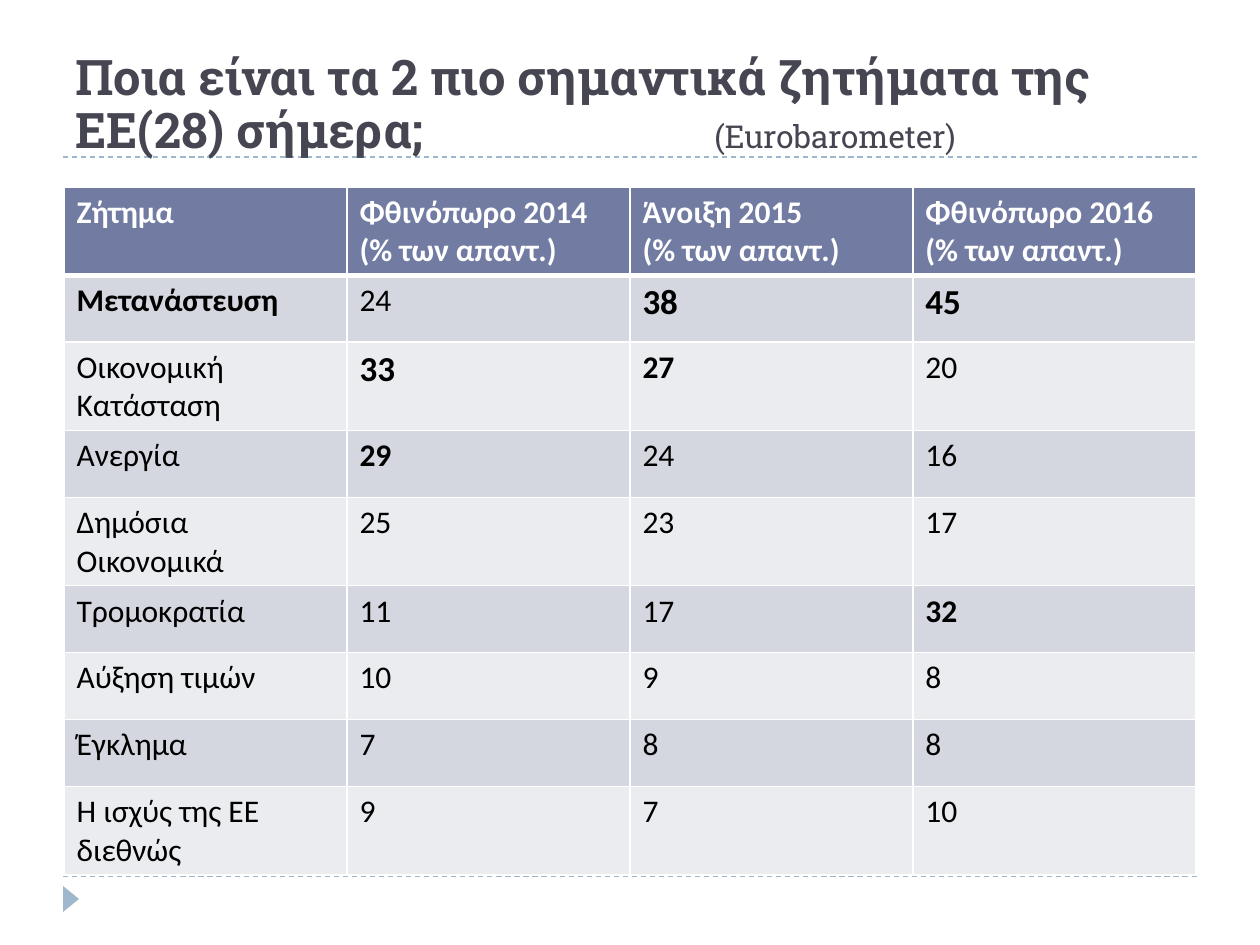
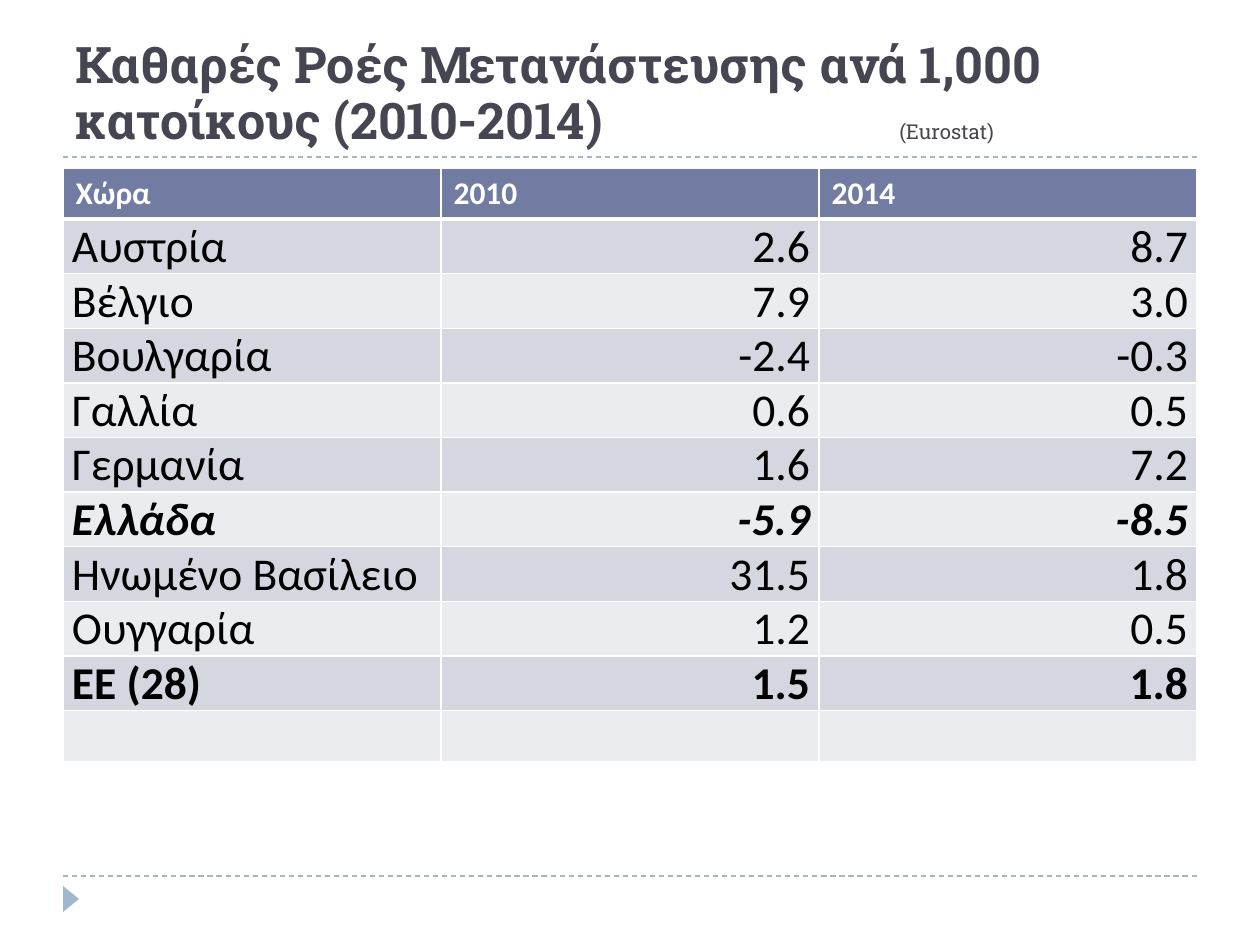
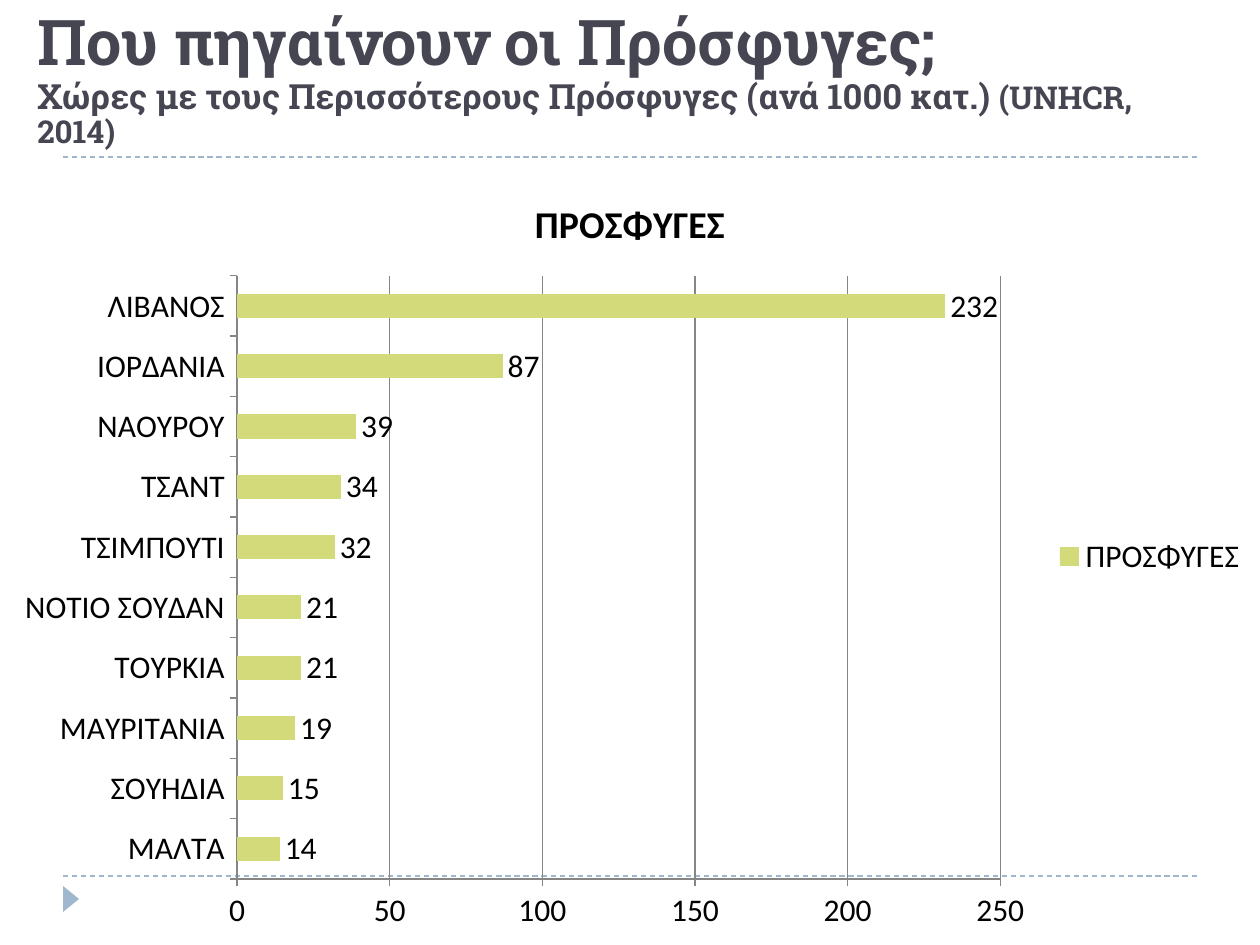
from lxml.etree import SubElement
from pptx import Presentation
from pptx.chart.data import CategoryChartData
from pptx.dml.color import RGBColor
from pptx.enum.chart import XL_CHART_TYPE, XL_LABEL_POSITION, XL_LEGEND_POSITION, XL_TICK_MARK
from pptx.enum.dml import MSO_LINE
from pptx.enum.shapes import MSO_CONNECTOR, MSO_SHAPE
from pptx.enum.text import MSO_ANCHOR, PP_ALIGN
from pptx.oxml.ns import qn
from pptx.util import Emu, Pt

PX_PER_INCH = 126
WIDTH, HEIGHT = 1260, 945
LEFT, RIGHT = 63, 1197
TITLE_RULE, FOOTER_RULE = 157, 876


def px(value):
    return Emu(round(value * 914400 / PX_PER_INCH))


def color(hex_string):
    return RGBColor.from_string(hex_string)


class Deck:
    heading_font = "Roboto Slab"
    body_font = "Calibri"
    ink = "464653"
    black = "000000"
    white = "FFFFFF"
    accent = "9FB8CD"
    header_fill = "727CA3"
    bands = ("D5D7E0", "EBECF0")
    bar_fill = "D2DA7A"
    grid = "868686"

    def __init__(self):
        self.presentation = Presentation()
        self.presentation.slide_width = px(WIDTH)
        self.presentation.slide_height = px(HEIGHT)
        self.slide = None

    def add_slide(self):
        self.slide = self.presentation.slides.add_slide(self.presentation.slide_layouts[6])
        for y in (FOOTER_RULE, TITLE_RULE):
            self.rule(y)
        self.marker()

    def rule(self, y):
        connector = self.slide.shapes.add_connector(
            MSO_CONNECTOR.STRAIGHT, px(LEFT), px(y), px(RIGHT), px(y))
        connector.line.color.rgb = color(self.accent)
        connector.line.width = Pt(0.75)
        connector.line.dash_style = MSO_LINE.DASH
        SubElement(connector._element.spPr, qn("a:effectLst"))

    def marker(self):
        shape = self.slide.shapes.add_shape(
            MSO_SHAPE.ISOSCELES_TRIANGLE, px(58), px(891), px(26), px(16))
        shape.rotation = 90
        shape.shadow.inherit = False
        shape.fill.solid()
        shape.fill.fore_color.rgb = color(self.accent)
        shape.line.fill.background()

    def style(self, font, size, hex_string, bold=False, italic=False, name=body_font):
        font.name = name
        font.size = Pt(size)
        font.bold = bold
        font.italic = italic
        font.color.rgb = color(hex_string)

    def title(self, left, top, width, height, runs, spacing=0.9, tab=None):
        box = self.slide.shapes.add_textbox(px(left), px(top), px(width), px(height))
        frame = box.text_frame
        frame.word_wrap = True
        frame.vertical_anchor = MSO_ANCHOR.BOTTOM
        paragraph = frame.paragraphs[0]
        paragraph.line_spacing = spacing
        if tab:
            tabs = SubElement(paragraph._p.get_or_add_pPr(), qn("a:tabLst"))
            SubElement(tabs, qn("a:tab"), pos=str(px(tab)), algn="l")
        for text, size, bold in runs:
            run = paragraph.add_run()
            run.text = text.rstrip("\n")
            self.style(run.font, size, self.ink, bold, name=self.heading_font)
            if text.endswith("\n"):
                paragraph.add_line_break()

    def table(self, left, top, width, row_heights, columns):
        shape = self.slide.shapes.add_table(
            len(row_heights), columns, px(left), px(top), px(width), px(sum(row_heights)))
        table = shape.table
        for column in table.columns:
            column.width = px(width / columns)
        for index, height in enumerate(row_heights):
            table.rows[index].height = px(height)
            for cell in table.rows[index].cells:
                fill = self.bands[(index - 1) % 2] if index else self.header_fill
                cell.fill.solid()
                cell.fill.fore_color.rgb = color(fill)
                self.borders(cell, 1 if index else 3, 3 if index == 1 else 1)
        return table

    def borders(self, cell, bottom, top):
        properties = cell._tc.get_or_add_tcPr()
        sides = (("a:lnL", 1), ("a:lnR", 1), ("a:lnT", top), ("a:lnB", bottom))
        for position, (side, points) in enumerate(sides):
            line = properties.makeelement(qn(side), {"w": str(Pt(points))})
            fill = SubElement(line, qn("a:solidFill"))
            SubElement(fill, qn("a:srgbClr"), val=self.white)
            properties.insert(position, line)

    def cell(self, cell, text, size=18, hex_string=black, bold=False, italic=False,
             align=None, tight=False):
        if tight:
            cell.margin_left = cell.margin_right = px(9)
            cell.margin_top = cell.margin_bottom = 0
        frame = cell.text_frame
        for index, line in enumerate(text.split("\n")):
            paragraph = frame.add_paragraph() if index else frame.paragraphs[0]
            paragraph.alignment = align
            run = paragraph.add_run()
            run.text = line
            self.style(run.font, size, hex_string, bold, italic)

    def header(self, table, labels):
        for cell, label in zip(table.rows[0].cells, labels):
            self.cell(cell, label, hex_string=self.white, bold=True)

    def bar_chart(self, left, top, width, height, name, values):
        data = CategoryChartData()
        data.categories = list(values)
        data.add_series(name, list(values.values()))
        chart = self.slide.shapes.add_chart(
            XL_CHART_TYPE.BAR_CLUSTERED, px(left), px(top), px(width), px(height), data).chart
        self.style(chart.font, 18, self.black)
        chart.has_title = True
        run = chart.chart_title.text_frame.paragraphs[0].add_run()
        run.text = name
        self.style(run.font, 21.6, self.black, bold=True)
        chart.has_legend = True
        chart.legend.position = XL_LEGEND_POSITION.RIGHT
        chart.legend.include_in_layout = False
        plot = chart.plots[0]
        plot.vary_by_categories = False
        plot.gap_width = 150
        plot.has_data_labels = True
        plot.data_labels.show_value = True
        plot.data_labels.position = XL_LABEL_POSITION.OUTSIDE_END
        series = plot.series[0]
        series.format.fill.solid()
        series.format.fill.fore_color.rgb = color(self.bar_fill)
        value_axis = chart.value_axis
        value_axis.minimum_scale, value_axis.maximum_scale = 0, 250
        value_axis.major_unit = 50
        value_axis.has_major_gridlines = True
        for axis in (chart.category_axis, value_axis):
            axis.major_tick_mark = XL_TICK_MARK.OUTSIDE
        for part in (chart.category_axis, value_axis, value_axis.major_gridlines):
            part.format.line.color.rgb = color(self.grid)
            part.format.line.width = Pt(0.75)


def issues_slide(deck):
    deck.add_slide()
    deck.title(LEFT, 26, 1134, 139, [
        ("Ποια είναι τα 2 πιο σημαντικά ζητήματα της ΕΕ(28) σήμερα;\t", 28, True),
        ("(Eurobarometer)", 18, False)], tab=639)
    issues = [
        ("Μετανάστευση", 24, 38, 45),
        ("Οικονομική Κατάσταση", 33, 27, 20),
        ("Ανεργία", 29, 24, 16),
        ("Δημόσια Οικονομικά", 25, 23, 17),
        ("Τρομοκρατία", 11, 17, 32),
        ("Αύξηση τιμών", 10, 9, 8),
        ("Έγκλημα", 7, 8, 8),
        ("Η ισχύς της ΕΕ διεθνώς", 9, 7, 10),
    ]
    bold_sizes = {(1, 0): 18, (1, 2): 20, (1, 3): 20, (2, 1): 20, (2, 2): 18,
                  (3, 1): 18, (5, 3): 18}
    two_lines, one_line = 83, 67
    heights = [two_lines] + [two_lines if " " in row[0] and row[0] != "Αύξηση τιμών"
                             else one_line for row in issues]
    table = deck.table(64, 187, 1132, heights, 4)
    deck.header(table, ["Ζήτημα"] + [
        f"{period}\n(% των απαντ.)"
        for period in ("Φθινόπωρο 2014", "Άνοιξη 2015", "Φθινόπωρο 2016")])
    for row, values in enumerate(issues, 1):
        for column, value in enumerate(values):
            place = (row, column)
            deck.cell(table.cell(row, column), str(value), bold_sizes.get(place, 18),
                      bold=place in bold_sizes)


def flows_slide(deck):
    deck.add_slide()
    deck.title(LEFT, 21, 1134, 136, [
        ("Καθαρές Ροές Μετανάστευσης ανά 1,000 κατοίκους (2010-2014)\t", 28.8, True),
        ("(Eurostat)", 11.7, False)], spacing=0.93, tab=824)
    flows = [
        ("Αυστρία", "2.6", "8.7"),
        ("Βέλγιο", "7.9", "3.0"),
        ("Βουλγαρία", "-2.4", "-0.3"),
        ("Γαλλία", "0.6", "0.5"),
        ("Γερμανία", "1.6", "7.2"),
        ("Ελλάδα", "-5.9", "-8.5"),
        ("Ηνωμένο Βασίλειο", "31.5", "1.8"),
        ("Ουγγαρία", "1.2", "0.5"),
        ("ΕΕ (28)", "1.5", "1.8"),
    ]
    table = deck.table(LEFT, 168, 1134, [51] * (len(flows) + 2), 3)
    deck.header(table, ["Χώρα", "2010", "2014"])
    for row, values in enumerate(flows, 1):
        country = values[0]
        for column, value in enumerate(values):
            deck.cell(table.cell(row, column), value, 26,
                      bold=country in ("Ελλάδα", "ΕΕ (28)"), italic=country == "Ελλάδα",
                      align=PP_ALIGN.RIGHT if column else PP_ALIGN.JUSTIFY, tight=True)


def refugees_slide(deck):
    deck.add_slide()
    deck.title(25, 21, 1172, 136, [
        ("Που πηγαίνουν οι Πρόσφυγες;\n", 36, True),
        ("Χώρες με τους Περισσότερους Πρόσφυγες (ανά 1000 κατ.) ", 19.8, True),
        ("(UNHCR, 2014)", 18, True)])
    deck.bar_chart(0, 168, 1260, 777, "ΠΡΟΣΦΥΓΕΣ", {
        "ΜΑΛΤΑ": 14, "ΣΟΥΗΔΙΑ": 15, "ΜΑΥΡΙΤΑΝΙΑ": 19, "ΤΟΥΡΚΙΑ": 21, "ΝΟΤΙΟ ΣΟΥΔΑΝ": 21,
        "ΤΣΙΜΠΟΥΤΙ": 32, "ΤΣΑΝΤ": 34, "ΝΑΟΥΡΟΥ": 39, "ΙΟΡΔΑΝΙΑ": 87, "ΛΙΒΑΝΟΣ": 232})


def main():
    deck = Deck()
    issues_slide(deck)
    flows_slide(deck)
    refugees_slide(deck)
    deck.presentation.save("out.pptx")


if __name__ == "__main__":
    main()
